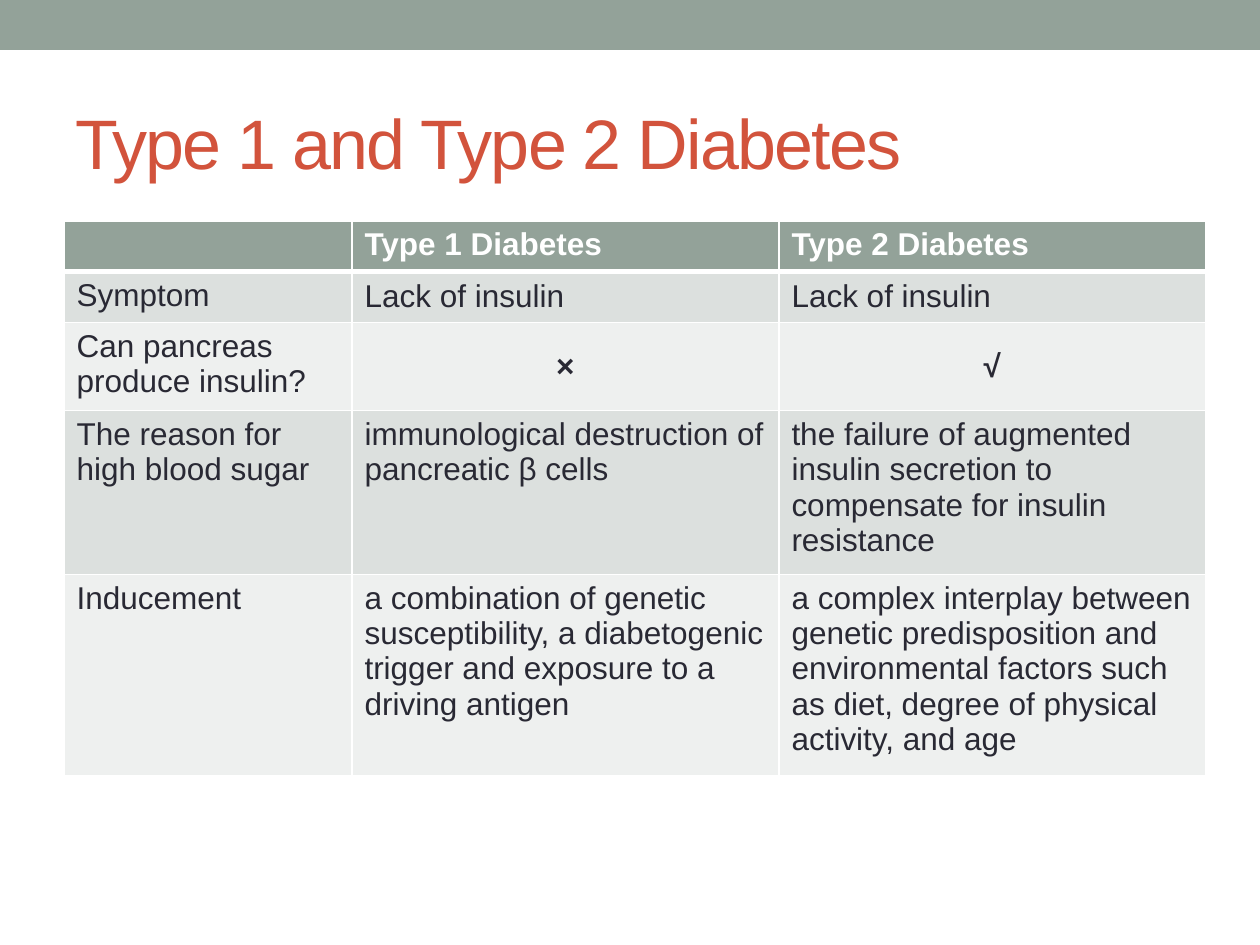
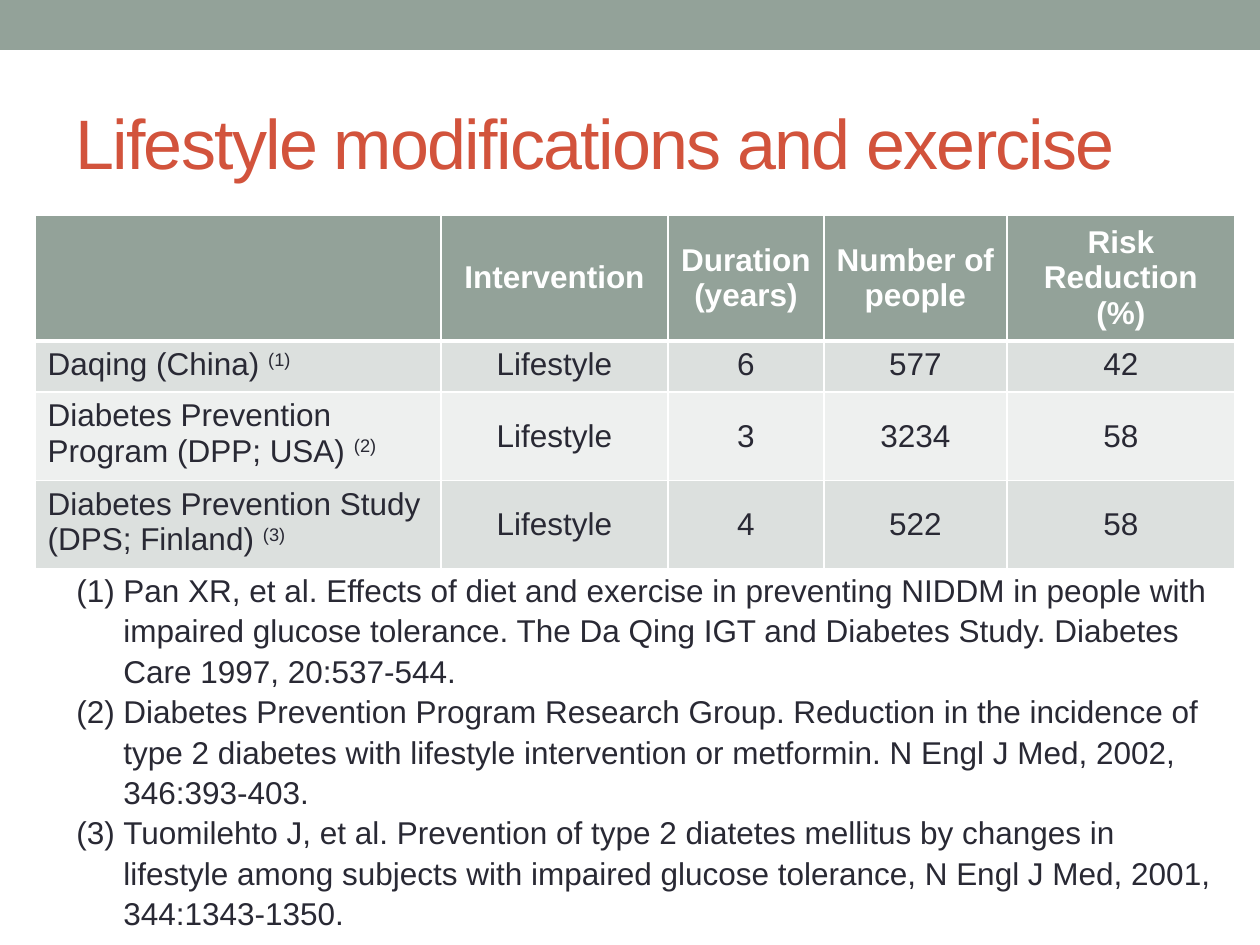
from lxml import etree
from pptx import Presentation
from pptx.dml.color import RGBColor
from pptx.enum.shapes import MSO_SHAPE
from pptx.enum.text import MSO_ANCHOR, PP_ALIGN
from pptx.oxml import parse_xml
from pptx.oxml.ns import nsdecls, qn
from pptx.util import Pt

PX = 914400 // 126
RECTANGLE = MSO_SHAPE.RECTANGLE
TOP, MIDDLE = MSO_ANCHOR.TOP, MSO_ANCHOR.MIDDLE
LEFT, CENTER = PP_ALIGN.LEFT, PP_ALIGN.CENTER

SAGE, RUST, INK, WHITE = "93A299", "D2533C", "292934", "FFFFFF"
ROW_TINTS = ["EEF0EF", "DCE0DE"]
THIN, THICK = 1, 3

DIABETES_TYPES = {
    "title": "Type 1 and Type 2 Diabetes",
    "corner": (64, 221),
    "columns": [288, 427, 427],
    "rows": [50, 51, 84, 153, 189],
    "middle_rows": {1, 2},
    "centered_rows": {2},
    "bold_rows": {0, 2},
    "cells": [
        ["", "Type 1 Diabetes", "Type 2 Diabetes"],
        ["Symptom", "Lack of insulin", "Lack of insulin"],
        ["Can pancreas produce insulin?", "×", "√"],
        ["The reason for high blood sugar",
         "immunological destruction of pancreatic β cells",
         "the failure of augmented insulin secretion to compensate for "
         "insulin resistance"],
        ["Inducement",
         "a combination of genetic susceptibility, a diabetogenic trigger "
         "and exposure to a driving antigen",
         "a complex interplay between genetic predisposition and "
         "environmental factors such as diet, degree of physical activity, "
         "and age"],
    ],
    "references": [],
}

# A caret marks the start of a superscript reference number.
LIFESTYLE_TRIALS = {
    "title": "Lifestyle modifications and exercise",
    "corner": (35, 215),
    "columns": [406, 227, 156, 183, 228],
    "rows": [118, 51, 83, 83],
    "middle_rows": {0, 2, 3},
    "centered_rows": {0, 1, 2, 3},
    "bold_rows": {0},
    "cells": [
        ["", "Intervention", "Duration (years)", "Number of people",
         "Risk Reduction (%)"],
        ["Daqing (China) ^(1)", "Lifestyle", "6", "577", "42"],
        ["Diabetes Prevention Program (DPP; USA) ^(2)", "Lifestyle", "3",
         "3234", "58"],
        ["Diabetes Prevention Study (DPS; Finland) ^(3)", "Lifestyle", "4",
         "522", "58"],
    ],
    "references": [
        "Pan XR, et al. Effects of diet and exercise in preventing NIDDM in "
        "people with impaired glucose tolerance. The Da Qing IGT and Diabetes "
        "Study. Diabetes Care 1997, 20:537-544.",
        "Diabetes Prevention Program Research Group. Reduction in the "
        "incidence of type 2 diabetes with lifestyle intervention or "
        "metformin. N Engl J Med, 2002, 346:393-403.",
        "Tuomilehto J, et al. Prevention of type 2 diatetes mellitus by "
        "changes in lifestyle among subjects with impaired glucose tolerance, "
        "N Engl J Med, 2001, 344:1343-1350.",
    ],
}


def color(hex_code):
    return RGBColor.from_string(hex_code)


def add_text(paragraph, text, hex_code, size=18, bold=False):
    """Append a formatted run and return its run properties element."""
    run = paragraph.add_run()
    run.text = text
    formats = {"name": "Arial", "size": Pt(size), "bold": bold}
    for attribute, value in formats.items():
        setattr(run.font, attribute, value)
    run.font.color.rgb = color(hex_code)
    return run._r.get_or_add_rPr()


presentation = Presentation()
presentation.slide_width = 1260 * PX
presentation.slide_height = 945 * PX

for content in (DIABETES_TYPES, LIFESTYLE_TRIALS):
    slide = presentation.slides.add_slide(presentation.slide_layouts[6])

    band = slide.shapes.add_shape(RECTANGLE, 0, 0, 1260 * PX, 50 * PX)
    band.shadow.inherit = False
    band.fill.solid()
    band.fill.fore_color.rgb = color(SAGE)
    band.line.fill.background()

    title = slide.shapes.add_textbox(63 * PX, 73 * PX, 1134 * PX, 136 * PX)
    title.text_frame.word_wrap = True
    title.text_frame.vertical_anchor = MIDDLE
    title_format = add_text(title.text_frame.paragraphs[0], content["title"],
                            RUST, size=40)
    title_format.set("spc", "-100")

    columns, rows = content["columns"], content["rows"]
    left, top = content["corner"]
    table = slide.shapes.add_table(
        len(rows), len(columns), left * PX, top * PX,
        sum(columns) * PX, sum(rows) * PX).table
    table.horz_banding = False
    for column, width in zip(table.columns, columns):
        column.width = width * PX
    for row, height in zip(table.rows, rows):
        row.height = height * PX

    for r, row_texts in enumerate(content["cells"]):
        for c, text in enumerate(row_texts):
            cell = table.cell(r, c)
            is_value = c > 0
            cell.vertical_anchor = (
                MIDDLE if is_value and r in content["middle_rows"] else TOP)
            borders = {"lnL": THIN, "lnR": THIN,
                       "lnT": THICK if r == 1 else THIN,
                       "lnB": THICK if r == 0 else THIN}
            for side, points in borders.items():
                cell._tc.get_or_add_tcPr().append(parse_xml(
                    f'<a:{side} {nsdecls("a")} w="{Pt(points)}"><a:solidFill>'
                    f'<a:srgbClr val="{WHITE}"/></a:solidFill></a:{side}>'))
            cell.fill.solid()
            cell.fill.fore_color.rgb = color(ROW_TINTS[r % 2] if r else SAGE)

            paragraph = cell.text_frame.paragraphs[0]
            paragraph.alignment = (
                CENTER if is_value and r in content["centered_rows"] else LEFT)
            label, _, reference_number = text.partition("^")
            ink = INK if r else WHITE
            if label:
                add_text(paragraph, label, ink,
                         bold=is_value and r in content["bold_rows"])
            if reference_number:
                add_text(paragraph, reference_number, ink).set(
                    "baseline", "30000")

    if content["references"]:
        references = slide.shapes.add_textbox(
            64 * PX, 562 * PX, 1171 * PX, 357 * PX).text_frame
        references.word_wrap = True
        for i, citation in enumerate(content["references"]):
            paragraph = (references.add_paragraph() if i
                         else references.paragraphs[0])
            paragraph.line_spacing = 1.07
            add_text(paragraph, citation, INK)
            properties = paragraph._p.get_or_add_pPr()
            properties.set("marL", str(47 * PX))
            properties.set("indent", str(-47 * PX))
            numbering = etree.SubElement(properties, qn("a:buAutoNum"))
            numbering.set("type", "arabicParenBoth")

presentation.save("out.pptx")
